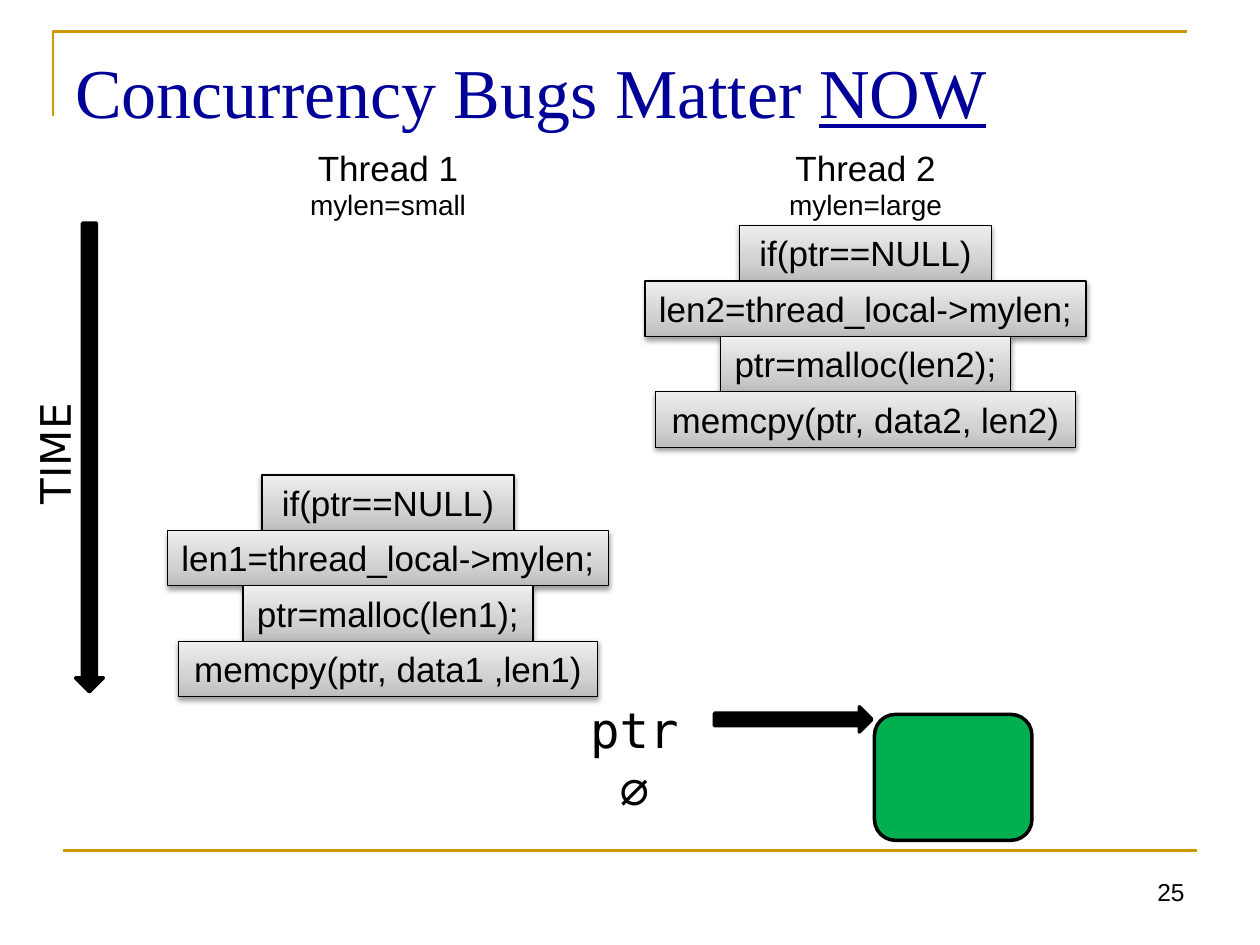
import copy

import lxml.etree
import pptx
import pptx.dml.color
import pptx.enum.shapes
import pptx.enum.text
import pptx.oxml
import pptx.oxml.ns
import pptx.util
from pptx.util import Inches

SHAPE = pptx.enum.shapes.MSO_SHAPE
ALIGN = pptx.enum.text.PP_ALIGN
ANCHOR = pptx.enum.text.MSO_ANCHOR
QN = pptx.oxml.ns.qn

GOLD, NAVY, BLACK, GREEN = "CC9900", "000099", "000000", "00B050"
GREYS = [(0, "BDBDBD"), (0.35, "D1D1D1"), (1, "EEEEEE")]
MONO = "DejaVu Sans Mono"
SHADOW = (
    f'<a:outerShdw {pptx.oxml.ns.nsdecls("a")} blurRad="39370" dist="20320" '
    'dir="5400000" rotWithShape="0"><a:srgbClr val="000000">'
    '<a:alpha val="38000"/></a:srgbClr></a:outerShdw>'
)


def rgb(code):
    return pptx.dml.color.RGBColor.from_string(code)


def put(frame, *runs, size=20, font="Arial", color=BLACK, align=ALIGN.CENTER,
        anchor=ANCHOR.TOP, under=None):
    """Write runs in one paragraph; the run equal to under is underlined."""
    frame.word_wrap = True
    frame.vertical_anchor = anchor
    para = frame.paragraphs[0]
    para.alignment = align
    for words in runs:
        run = para.add_run()
        run.text = words
        run.font.size = pptx.util.Pt(size)
        run.font.name = font
        run.font.color.rgb = rgb(color)
        if words == under:
            run.font.underline = True


def label(slide, left, top, width, height, *runs, turn=0, **style):
    box = slide.shapes.add_textbox(
        Inches(left), Inches(top), Inches(width), Inches(height))
    box.rotation = turn
    put(box.text_frame, *runs, **style)


def edge(shape, color, width):
    shape.line.color.rgb = rgb(color)
    shape.line.width = pptx.util.Pt(width)


def solid(slide, kind, left, top, width, height, color):
    shape = slide.shapes.add_shape(
        kind, Inches(left), Inches(top), Inches(width), Inches(height))
    shape.shadow.inherit = False
    shape.fill.solid()
    shape.fill.fore_color.rgb = rgb(color)
    edge(shape, BLACK, 2)


def step(slide, mid, top, width, code):
    """One line of code in a shaded box centred on mid."""
    box = slide.shapes.add_shape(
        SHAPE.RECTANGLE, Inches(mid - width / 2), Inches(top),
        Inches(width), Inches(0.44))
    box.fill.gradient()
    box.fill.gradient_angle = 90
    stops = box._element.spPr.find(".//" + QN("a:gsLst"))
    stops.insert(1, copy.deepcopy(stops[0]))
    for stop, (place, color) in zip(box.fill.gradient_stops, GREYS):
        stop.position = place
        stop.color.rgb = rgb(color)
    edge(box, BLACK, 0.75)
    box.shadow.inherit = False
    effects = box._element.spPr.find(QN("a:effectLst"))
    effects.append(pptx.oxml.parse_xml(SHADOW))
    put(box.text_frame, code)


def thread(slide, mid, top, name, note, lines):
    """Heading of a thread and its stack of code lines."""
    label(slide, mid - 0.75, 1.11, 1.5, 0.44, name)
    label(slide, mid - 1, 1.44, 2, 0.37, note, size=16)
    for row, (width, code) in enumerate(zip((2, 3.5, 2.3, 3.33), lines)):
        step(slide, mid, top + 0.44 * row, width, code)


def frame(slide):
    """Gold corner at the top and gold rule at the bottom."""
    pen = slide.shapes.build_freeform(Inches(0.42), Inches(0.92))
    pen.add_line_segments(
        [(Inches(0.42), Inches(0.25)), (Inches(9.42), Inches(0.25))],
        close=False)
    corner = pen.convert_to_shape()
    corner.fill.background()
    corner.shadow.inherit = False
    edge(corner, GOLD, 1.5)

    rule = slide.shapes.add_connector(
        pptx.enum.shapes.MSO_CONNECTOR.STRAIGHT,
        Inches(0.5), Inches(6.75), Inches(9.5), Inches(6.75))
    edge(rule, GOLD, 1.5)
    lxml.etree.SubElement(rule._element.spPr, QN("a:effectLst"))


def main():
    deck = pptx.Presentation()
    deck.slide_width, deck.slide_height = Inches(10), Inches(7.5)
    slide = deck.slides.add_slide(deck.slide_layouts[6])

    # Frame, title and page number
    frame(slide)
    label(slide, 0.5, 0.37, 9, 0.7, "Concurrency Bugs Matter ", "NOW",
          under="NOW", size=40, font="Times New Roman", color=NAVY,
          align=ALIGN.LEFT, anchor=ANCHOR.MIDDLE)
    label(slide, 7.17, 6.91, 2.33, 0.51, "25", size=14, align=ALIGN.RIGHT)

    # Time axis
    solid(slide, SHAPE.DOWN_ARROW, 0.6, 1.77, 0.22, 3.72, BLACK)
    label(slide, -0.17, 3.35, 1.2, 0.5, "TIME", turn=270, size=24,
          font="DejaVu Sans", anchor=ANCHOR.MIDDLE)

    # Threads
    thread(slide, 6.87, 1.79, "Thread 2", "mylen=large", [
        "if(ptr==NULL)", "len2=thread_local->mylen;",
        "ptr=malloc(len2);", "memcpy(ptr, data2, len2)"])
    thread(slide, 3.08, 3.77, "Thread 1", "mylen=small", [
        "if(ptr==NULL)", "len1=thread_local->mylen;",
        "ptr=malloc(len1);", "memcpy(ptr, data1 ,len1)"])

    # Pointer and the memory it refers to
    mono = {"size": 28, "font": MONO, "anchor": ANCHOR.MIDDLE}
    label(slide, 4.37, 5.5, 1.33, 0.57, "ptr", **mono)
    label(slide, 4.7, 5.98, 0.67, 0.57, "∅", **mono)
    solid(slide, SHAPE.RIGHT_ARROW, 5.67, 5.61, 1.25, 0.2, BLACK)
    solid(slide, SHAPE.ROUNDED_RECTANGLE, 6.94, 5.67, 1.25, 1, GREEN)

    deck.save("out.pptx")


if __name__ == "__main__":
    main()
